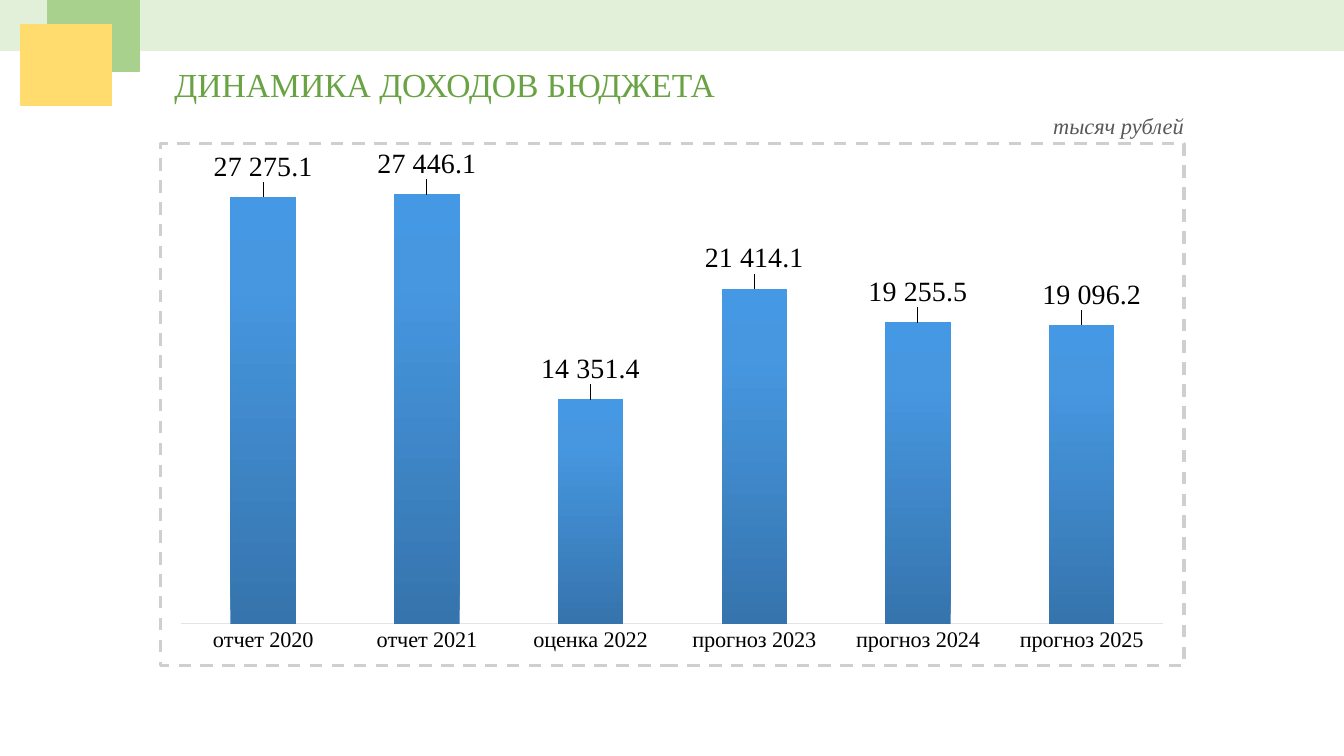
from pptx import Presentation
from pptx.chart.data import CategoryChartData
from pptx.dml.color import RGBColor
from pptx.enum.chart import XL_CHART_TYPE as CT, XL_LABEL_POSITION as LP, XL_TICK_MARK as TM
from pptx.enum.shapes import MSO_SHAPE
from pptx.enum.text import MSO_ANCHOR, MSO_AUTO_SIZE, PP_ALIGN
from pptx.oxml import parse_xml
from pptx.oxml.ns import nsdecls
from pptx.util import Pt

GREEN = RGBColor(0x6A, 0xA3, 0x43)
PALE_GREEN = RGBColor(0xE2, 0xF0, 0xD9)
MID_GREEN = RGBColor(0xA9, 0xD1, 0x8E)
YELLOW = RGBColor(0xFF, 0xDC, 0x6D)
GRAY = RGBColor(0x59, 0x59, 0x59)
AXIS = RGBColor(0xE0, 0xE5, 0xEB)
BORDER = RGBColor(0xD0, 0xCE, 0xCE)
BLACK = RGBColor(0, 0, 0)
BAR_STOPS = [(0, RGBColor(0x36, 0x74, 0xAD)), (80, RGBColor(0x46, 0x97, 0xE0)),
             (100, RGBColor(0x44, 0x98, 0xE4))]

NUMBER = r'#\ ##0.0'
INCOME = {
    'отчет 2020': 27275.1,
    'отчет 2021': 27446.1,
    'оценка 2022': 14351.4,
    'прогноз 2023': 21414.1,
    'прогноз 2024': 19255.5,
    'прогноз 2025': 19096.2,
}
LABEL_SHIFTS = [(0, -0.02), (0, -0.02), (0, -0.02),
                (0, -0.02), (0, -0.02), (0.01, -0.02)]
PLOT = {'x': 0.02, 'y': 0.02, 'w': 0.96, 'h': 0.9}


def layout_xml(**parts):
    body = ''.join(f'<c:{k} val="{v}"/>' for k, v in parts.items())
    return parse_xml(f'<c:layout {nsdecls("c")}><c:manualLayout>{body}'
                     '</c:manualLayout></c:layout>')


class Deck:
    font_name = 'Times New Roman'

    def __init__(self, prs):
        self.slide = prs.slides.add_slide(prs.slide_layouts[5])

    def style(self, font, size, color, **extra):
        font.color.rgb = color
        values = {'name': self.font_name, 'size': Pt(size), **extra}
        for key, value in values.items():
            setattr(font, key, value)

    def box(self, x, y, w, h):
        return [Pt(v) for v in (x, y, w, h)]

    def put_text(self, sp, text, size, color, **extra):
        tf = sp.text_frame
        frame = {'word_wrap': False, 'auto_size': MSO_AUTO_SIZE.SHAPE_TO_FIT_TEXT,
                 'vertical_anchor': MSO_ANCHOR.TOP}
        for key, value in frame.items():
            setattr(tf, key, value)
        p = tf.paragraphs[0]
        p.alignment = PP_ALIGN.LEFT
        p.line_spacing = 1.0
        p.space_before = Pt(0)
        r = p.add_run()
        r.text = text
        self.style(r.font, size, color, **extra)

    def title(self, text, x, y, w, h):
        sp = self.slide.shapes.title
        sp.left, sp.top, sp.width, sp.height = self.box(x, y, w, h)
        self.put_text(sp, text, 24, GREEN)

    def text(self, text, x, y, w, h):
        sp = self.slide.shapes.add_textbox(*self.box(x, y, w, h))
        self.put_text(sp, text, 16, GRAY, italic=True)

    def rect(self, color, x, y, w, h):
        sp = self.slide.shapes.add_shape(MSO_SHAPE.RECTANGLE, *self.box(x, y, w, h))
        sp.shadow.inherit = False
        sp.fill.solid()
        sp.fill.fore_color.rgb = color
        sp.line.color.rgb = color
        sp.line.width = Pt(1)

    def columns(self, values, x, y, w, h):
        data = CategoryChartData(number_format=NUMBER)
        data.categories = list(values)
        data.add_series('Series 1', list(values.values()))
        frame = self.slide.shapes.add_chart(CT.COLUMN_CLUSTERED, *self.box(x, y, w, h), data)
        chart = frame.chart
        chart.has_legend = False
        chart.has_title = False
        self.style(chart.font, 10, BLACK, name='Calibri')
        self.axes(chart)
        plot = chart.plots[0]
        plot.gap_width = 150
        plot.vary_by_categories = False
        self.bars(plot.series[0])
        self.labels(plot)
        self.border(chart)

    def axes(self, chart):
        cat, val = chart.category_axis, chart.value_axis
        cat.major_tick_mark = cat.minor_tick_mark = TM.NONE
        self.style(cat.tick_labels.font, 16, BLACK)
        cat.format.line.color.rgb = AXIS
        cat.format.line.width = Pt(0.75)
        limits = {'visible': False, 'has_major_gridlines': False,
                  'minimum_scale': 0, 'maximum_scale': 30000}
        for key, value in limits.items():
            setattr(val, key, value)

    def bars(self, series):
        series.invert_if_negative = False
        series.format.line.fill.background()
        stops = ''.join(f'<a:gs pos="{pos * 1000}"><a:srgbClr val="{color}"/></a:gs>'
                        for pos, color in BAR_STOPS)
        grad = parse_xml(f'<a:gradFill {nsdecls("a")} rotWithShape="1"><a:gsLst>{stops}'
                         '</a:gsLst><a:lin ang="16200000" scaled="0"/></a:gradFill>')
        series._element.find('{*}spPr').insert(0, grad)

    def labels(self, plot):
        plot.has_data_labels = True
        labels = plot.data_labels
        formats = {'show_value': True, 'number_format': NUMBER,
                   'number_format_is_linked': False, 'position': LP.OUTSIDE_END}
        for key, value in formats.items():
            setattr(labels, key, value)
        self.style(labels.font, 20, BLACK)
        for i, (dx, dy) in enumerate(LABEL_SHIFTS):
            label = plot.series[0].points[i].data_label
            self.style(label.font, 20, BLACK)
            label.position = LP.OUTSIDE_END
            idx = label._dLbl.find('{*}idx')
            idx.addnext(parse_xml(f'<c:numFmt {nsdecls("c")} formatCode="{NUMBER}" '
                                  'sourceLinked="0"/>'))
            idx.addnext(layout_xml(x=dx, y=dy))

    def border(self, chart):
        area = chart._chartSpace.find('{*}chart')
        plot_area = area.find('{*}plotArea')
        for old in plot_area.findall('{*}layout'):
            plot_area.remove(old)
        plot_area.insert(0, layout_xml(layoutTarget='inner', xMode='edge',
                                       yMode='edge', **PLOT))
        area.addnext(parse_xml(
            f'<c:spPr {nsdecls("c", "a")}><a:noFill/><a:ln w="{Pt(2.25)}"><a:solidFill>'
            f'<a:srgbClr val="{BORDER}"/></a:solidFill><a:prstDash val="dash"/>'
            '</a:ln></c:spPr>'))


def main():
    prs = Presentation()
    prs.slide_width, prs.slide_height = Pt(960), Pt(540)
    deck = Deck(prs)
    deck.title('ДИНАМИКА ДОХОДОВ БЮДЖЕТА', 117.4, 41.8, 404.6, 36)
    deck.rect(PALE_GREEN, 0, 0, 960, 36)
    deck.rect(MID_GREEN, 33.8, 0, 65.5, 51.1)
    deck.rect(YELLOW, 15.1, 18, 64.8, 57.6)
    deck.columns(INCOME, 113.8, 101.5, 733, 375.1)
    deck.text('тысяч рублей', 745.2, 76.3, 109.4, 26.6)
    prs.save("out.pptx")


if __name__ == "__main__":
    main()
